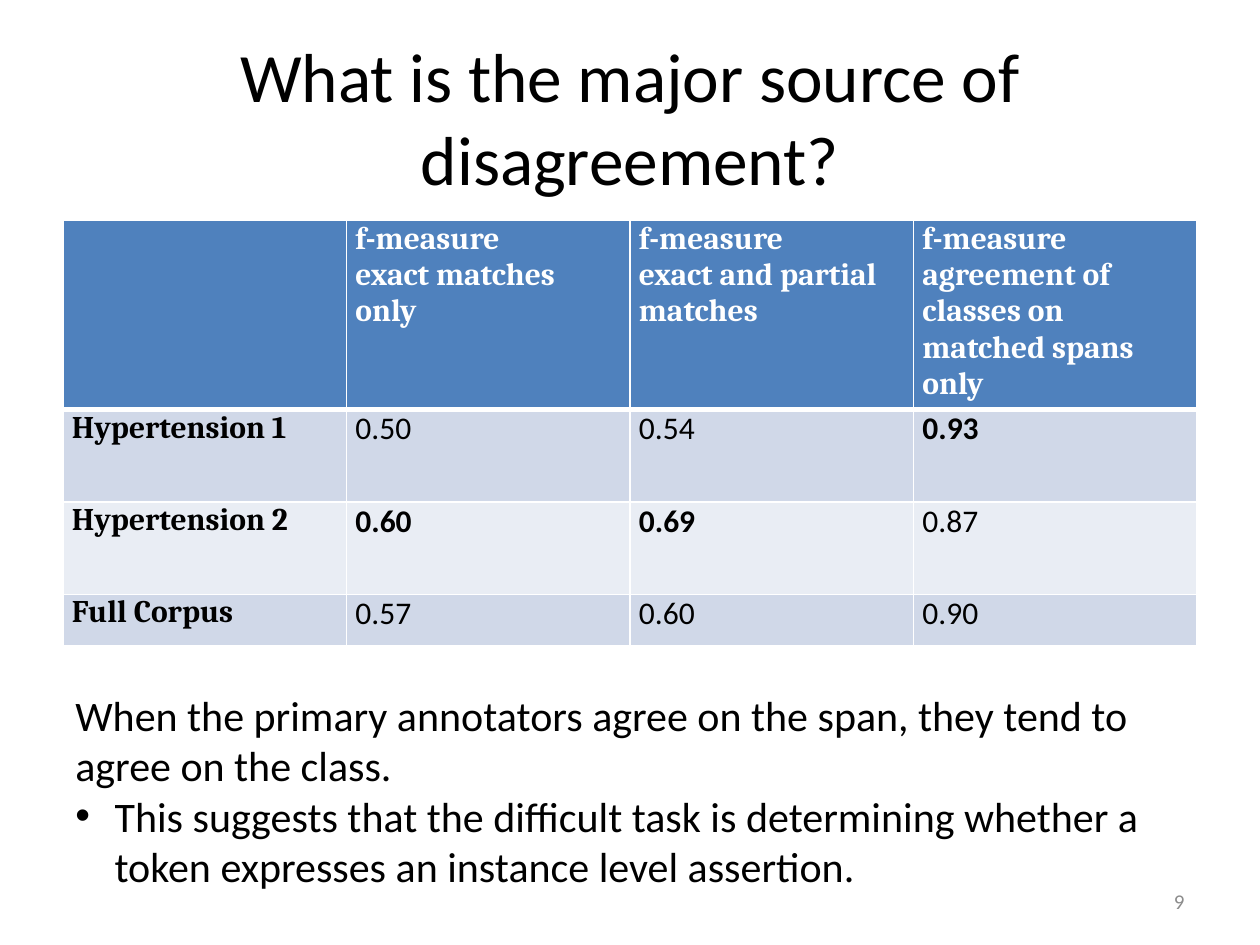
from lxml.etree import SubElement
from pptx import Presentation
from pptx.dml.color import RGBColor
from pptx.enum.text import MSO_ANCHOR as Anchor, PP_ALIGN as Align
from pptx.oxml.ns import qn
from pptx.util import Cm, Pt

BLACK = RGBColor(0x00, 0x00, 0x00)
WHITE = RGBColor(0xFF, 0xFF, 0xFF)
GRAY = RGBColor(0x8C, 0x8C, 0x8C)
HEADER_BLUE = RGBColor(0x4F, 0x81, 0xBD)
BAND_DARK = RGBColor(0xD0, 0xD8, 0xE8)
BAND_LIGHT = RGBColor(0xE9, 0xED, 0xF4)

BODY_FONT = "Calibri"
LABEL_FONT = "Cambria"

MARGIN = 1.27
CONTENT_WIDTH = 22.86
ROW_HEIGHTS = (3.67, 1.86, 1.86, 1.04)

HEADERS = (
    (),
    ("f-measure", "exact matches only"),
    ("f-measure", "exact and partial matches"),
    ("f-measure", "agreement of classes on matched spans only"),
)
SCORES = (
    ("Hypertension 1", "0.50", "0.54", "0.93"),
    ("Hypertension 2", "0.60", "0.69", "0.87"),
    ("Full Corpus", "0.57", "0.60", "0.90"),
)
BEST_SCORES = {(1, 3), (2, 1), (2, 2)}


def add_run(paragraph, text, size, color=BLACK, font=BODY_FONT, bold=False):
    run = paragraph.add_run()
    run.text = text
    run.font.size = Pt(size)
    run.font.name = font
    run.font.bold = bold
    run.font.color.rgb = color


def add_text_frame(slide, left, top, width, height, anchor=Anchor.TOP):
    box = slide.shapes.add_textbox(Cm(left), Cm(top), Cm(width), Cm(height))
    frame = box.text_frame
    frame.word_wrap = True
    frame.vertical_anchor = anchor
    return frame


def add_line(slide, text, size, color, align, *box):
    """Add one vertically centred paragraph in its own box."""
    paragraph = add_text_frame(slide, *box, anchor=Anchor.MIDDLE).paragraphs[0]
    paragraph.alignment = align
    add_run(paragraph, text, size, color)


def set_borders(cell, top, bottom):
    """Draw white borders; top and bottom are widths in points."""
    properties = cell._tc.get_or_add_tcPr()
    widths = {"a:lnL": 1, "a:lnR": 1, "a:lnT": top, "a:lnB": bottom}
    for position, (tag, width) in enumerate(widths.items()):
        line = SubElement(properties, qn(tag), w=str(Pt(width)))
        fill = SubElement(line, qn("a:solidFill"))
        SubElement(fill, qn("a:srgbClr"), val=str(WHITE))
        properties.insert(position, line)


def fill_cell(cell, lines, fill, **style):
    cell.fill.solid()
    cell.fill.fore_color.rgb = fill
    cell.margin_left = cell.margin_right = Cm(0.18)
    cell.margin_top = cell.margin_bottom = 0
    frame = cell.text_frame
    for index, text in enumerate(lines):
        paragraph = frame.add_paragraph() if index else frame.paragraphs[0]
        add_run(paragraph, text, 18, **style)


def add_score_table(slide, left, top, width):
    table = slide.shapes.add_table(
        len(ROW_HEIGHTS), len(HEADERS),
        Cm(left), Cm(top), Cm(width), Cm(sum(ROW_HEIGHTS)),
    ).table
    for column in table.columns:
        column.width = Cm(width / len(HEADERS))
    for row, height in zip(table.rows, ROW_HEIGHTS):
        row.height = Cm(height)

    for column, lines in enumerate(HEADERS):
        cell = table.cell(0, column)
        fill_cell(cell, lines, HEADER_BLUE, color=WHITE, font=LABEL_FONT, bold=True)
        set_borders(cell, top=1, bottom=3)

    for row, values in enumerate(SCORES, start=1):
        band = BAND_DARK if row % 2 else BAND_LIGHT
        for column, value in enumerate(values):
            is_label = column == 0
            cell = table.cell(row, column)
            fill_cell(cell, [value], band,
                      font=LABEL_FONT if is_label else BODY_FONT,
                      bold=is_label or (row, column) in BEST_SCORES)
            set_borders(cell, top=3 if row == 1 else 1, bottom=1)


def add_conclusion(slide, *box):
    frame = add_text_frame(slide, *box)
    add_run(frame.paragraphs[0],
            "When the primary annotators agree on the span, "
            "they tend to agree on the class.", 24)
    bullet = frame.add_paragraph()
    add_run(bullet,
            "This suggests that the difficult task is determining whether "
            "a token expresses an instance level assertion.", 24)
    properties = bullet._p.get_or_add_pPr()
    indent = Cm(0.79)
    properties.set("marL", str(indent))
    properties.set("indent", str(-indent))
    SubElement(properties, qn("a:buFont"), typeface="Arial")
    SubElement(properties, qn("a:buChar"), char="•")


def main():
    presentation = Presentation()
    presentation.slide_width = Cm(25.4)
    presentation.slide_height = Cm(19.05)
    slide = presentation.slides.add_slide(presentation.slide_layouts[6])
    add_line(slide, "What is the major source of disagreement?", 39.6, BLACK,
             Align.CENTER, MARGIN, 0.76, CONTENT_WIDTH, 3.18)
    add_score_table(slide, MARGIN, 4.45, CONTENT_WIDTH)
    add_conclusion(slide, MARGIN, 13.77, CONTENT_WIDTH, 4.37)
    add_line(slide, "9", 12, GRAY, Align.RIGHT, 18.2, 17.65, 5.93, 1.02)
    presentation.save("out.pptx")


if __name__ == "__main__":
    main()
